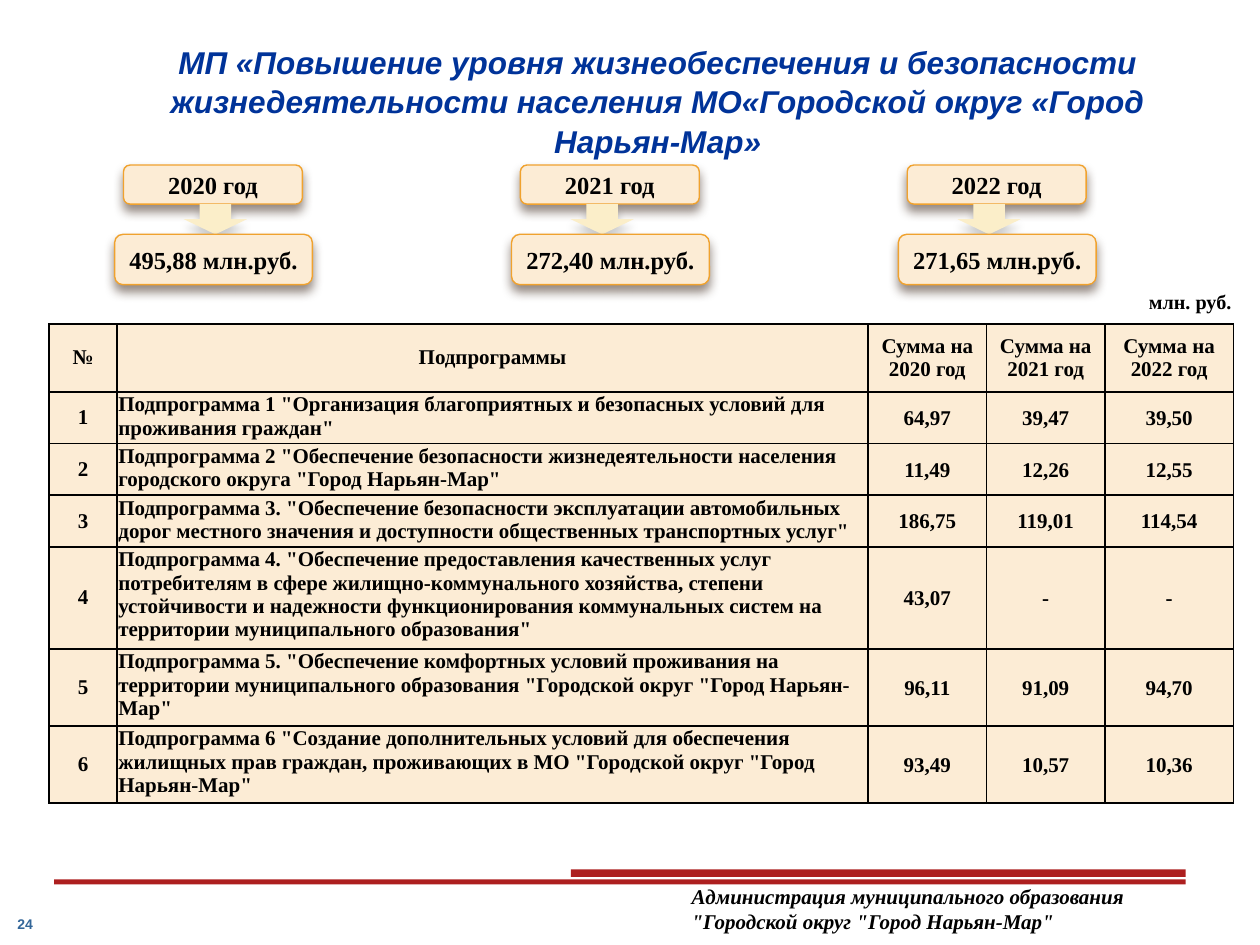
from lxml.etree import SubElement
from pptx import Presentation
from pptx.dml.color import RGBColor
from pptx.enum.shapes import MSO_SHAPE
from pptx.enum.text import MSO_ANCHOR, MSO_AUTO_SIZE, PP_ALIGN
from pptx.oxml.ns import qn
from pptx.util import Inches, Pt

COLUMNS, ROWS = 100, 75  # layout grid of the slide
SERIF, SANS = "Times New Roman", "Arial"
BLACK, NAVY, STEEL = "000000", "003399", "336699"
CREAM, SAND, ORANGE, RED = "FCECD5", "FBEEC9", "F0A22E", "AD1F1F"
BOX_SHADOW, ARROW_SHADOW = ("4E3B30", 60, 6), ("000000", 20, 5)


def color(hex_value):
    return RGBColor.from_string(hex_value)


class BudgetSlide:
    def __init__(self, deck):
        self.column = deck.slide_width / COLUMNS
        self.row = deck.slide_height / ROWS
        self.slide = deck.slides.add_slide(deck.slide_layouts[5])
        self.shapes = self.slide.shapes

    def place(self, x, y, width, height):
        return (round(x * self.column), round(y * self.row),
                round(width * self.column), round(height * self.row))

    def set_text(self, frame, text, size, font=SERIF, ink=BLACK, italic=False,
                 align=PP_ALIGN.LEFT, anchor=MSO_ANCHOR.TOP):
        frame.text = text
        frame.vertical_anchor = anchor
        paragraph = frame.paragraphs[0]
        paragraph.alignment = align
        style = paragraph.runs[0].font
        style.name, style.size = font, Pt(size)
        style.bold, style.italic = True, italic
        style.color.rgb = color(ink)

    def title(self, text, area):
        heading = self.shapes.title
        heading.left, heading.top, heading.width, heading.height = self.place(*area)
        frame = heading.text_frame
        frame.word_wrap = True
        frame.auto_size = MSO_AUTO_SIZE.NONE
        self.set_text(frame, text, 18, SANS, NAVY, True, PP_ALIGN.CENTER, MSO_ANCHOR.MIDDLE)
        frame.paragraphs[0].line_spacing = 1.05

    def label(self, text, area, size, wrap=True, **style):
        frame = self.shapes.add_textbox(*self.place(*area)).text_frame
        frame.word_wrap = wrap
        self.set_text(frame, text, size, **style)

    def block(self, preset, area, fill, line=None, shadow=None, text=None):
        block = self.shapes.add_shape(preset, *self.place(*area))
        block.shadow.inherit = False
        block.fill.solid()
        block.fill.fore_color.rgb = color(fill)
        if line:
            block.line.color.rgb = color(line)
            block.line.width = Pt(0.79)
        else:
            block.line.fill.background()
        if shadow:
            self.cast_shadow(block, *shadow)
        if text:
            frame = block.text_frame
            frame.margin_left = frame.margin_right = 0
            self.set_text(frame, text, 14, align=PP_ALIGN.CENTER, anchor=MSO_ANCHOR.MIDDLE)

    def cast_shadow(self, block, tint, opacity, blur):
        effects = block._element.spPr.find(qn("a:effectLst"))
        outer = SubElement(effects, qn("a:outerShdw"), blurRad=str(Pt(blur)),
                           dist=str(Pt(4)), dir="5400000", rotWithShape="0")
        shade = SubElement(outer, qn("a:srgbClr"), val=tint)
        SubElement(shade, qn("a:alpha"), val=str(opacity * 1000))

    def border(self, cell):
        properties = cell._tc.get_or_add_tcPr()
        for side in ("lnL", "lnR", "lnT", "lnB"):
            edge = SubElement(properties, qn(f"a:{side}"), w=str(Pt(1)))
            fill = SubElement(edge, qn("a:solidFill"))
            SubElement(fill, qn("a:srgbClr"), val=BLACK)

    def table(self, records, left, top, widths, heights):
        area = self.place(left, top, sum(widths), sum(heights))
        table = self.shapes.add_table(len(records), len(widths), *area).table
        table.first_row = table.horz_banding = False
        for column, width in zip(table.columns, widths):
            column.width = round(width * self.column)
        for row, height in zip(table.rows, heights):
            row.height = round(height * self.row)
        for r, record in enumerate(records):
            for c, text in enumerate(record):
                cell = table.cell(r, c)
                self.border(cell)
                cell.fill.solid()
                cell.fill.fore_color.rgb = color(CREAM)
                is_name = r > 0 and c == 1
                self.set_text(cell.text_frame, text, 12,
                              align=PP_ALIGN.LEFT if is_name else PP_ALIGN.CENTER)
                cell.vertical_anchor = MSO_ANCHOR.TOP if is_name else MSO_ANCHOR.MIDDLE
                if r > 0 and c > 0:
                    cell.margin_left = cell.margin_right = cell.margin_top = Inches(0.01)
                    cell.margin_bottom = 0


def main():
    deck = Presentation()
    deck.slide_width, deck.slide_height = Inches(10), Inches(7.5)
    page = BudgetSlide(deck)

    # Footer rules and title
    page.block(MSO_SHAPE.RECTANGLE, (45.3, 69, 48.8, 0.6), RED)
    page.block(MSO_SHAPE.RECTANGLE, (4.3, 69.8, 89.8, 0.4), RED)
    page.title("МП «Повышение уровня жизнеобеспечения и безопасности "
               "жизнедеятельности населения МО«Городской округ «Город Нарьян-Мар»",
               (8.3, 2.9, 87.8, 10.1))

    # Yearly totals: year, arrow, amount
    totals = [(9.1, 14.6, "2020", "495,88"),
              (40.6, 45.3, "2021", "272,40"),
              (71.3, 76, "2022", "271,65")]
    for left, arrow_left, year, amount in totals:
        page.block(MSO_SHAPE.ROUNDED_RECTANGLE, (left + 0.7, 13.1, 14.2, 3.1),
                   CREAM, ORANGE, BOX_SHADOW, f"{year} год")
        page.block(MSO_SHAPE.DOWN_ARROW, (arrow_left, 16.2, 5, 2.4),
                   SAND, shadow=ARROW_SHADOW)
        page.block(MSO_SHAPE.ROUNDED_RECTANGLE, (left, 18.6, 15.7, 4),
                   CREAM, ORANGE, BOX_SHADOW, f"{amount} млн.руб.")

    # Subprogramme table
    page.label("млн. руб.", (90.2, 22.5, 8.7, 2.9), 11.5, wrap=False)
    subprograms = [
        ("№", "Подпрограммы", "Сумма на 2020 год", "Сумма на 2021 год", "Сумма на 2022 год"),
        ("1", 'Подпрограмма 1 "Организация благоприятных и безопасных условий для '
              'проживания граждан"', "64,97", "39,47", "39,50"),
        ("2", 'Подпрограмма 2 "Обеспечение безопасности жизнедеятельности населения '
              'городского округа "Город Нарьян-Мар"', "11,49", "12,26", "12,55"),
        ("3", 'Подпрограмма 3. "Обеспечение безопасности эксплуатации автомобильных '
              'дорог местного значения и доступности общественных транспортных услуг"',
         "186,75", "119,01", "114,54"),
        ("4", 'Подпрограмма 4. "Обеспечение предоставления качественных услуг '
              'потребителям в сфере жилищно-коммунального хозяйства, степени '
              'устойчивости и надежности функционирования коммунальных систем на '
              'территории муниципального образования"', "43,07", "-", "-"),
        ("5", 'Подпрограмма 5. "Обеспечение комфортных условий проживания на '
              'территории муниципального образования "Городской округ "Город '
              'Нарьян-Мар"', "96,11", "91,09", "94,70"),
        ("6", 'Подпрограмма 6 "Создание дополнительных условий для обеспечения '
              'жилищных прав граждан, проживающих в МО "Городской округ "Город '
              'Нарьян-Мар"', "93,49", "10,57", "10,36"),
    ]
    page.table(subprograms, 3.9, 25.7, (5.4, 59.6, 9.4, 9.4, 10.2),
               (5.4, 4.1, 4.1, 4.1, 8.1, 6.1, 6.1))

    # Footer text and page number
    page.label('Администрация муниципального образования "Городской округ '
               '"Город Нарьян-Мар"', (53.9, 69.6, 38.6, 5), 12, italic=True)
    page.label("24", (0.4, 72.2, 5.9, 2.4), 8, font=SANS, ink=STEEL)

    deck.save("out.pptx")


if __name__ == "__main__":
    main()
